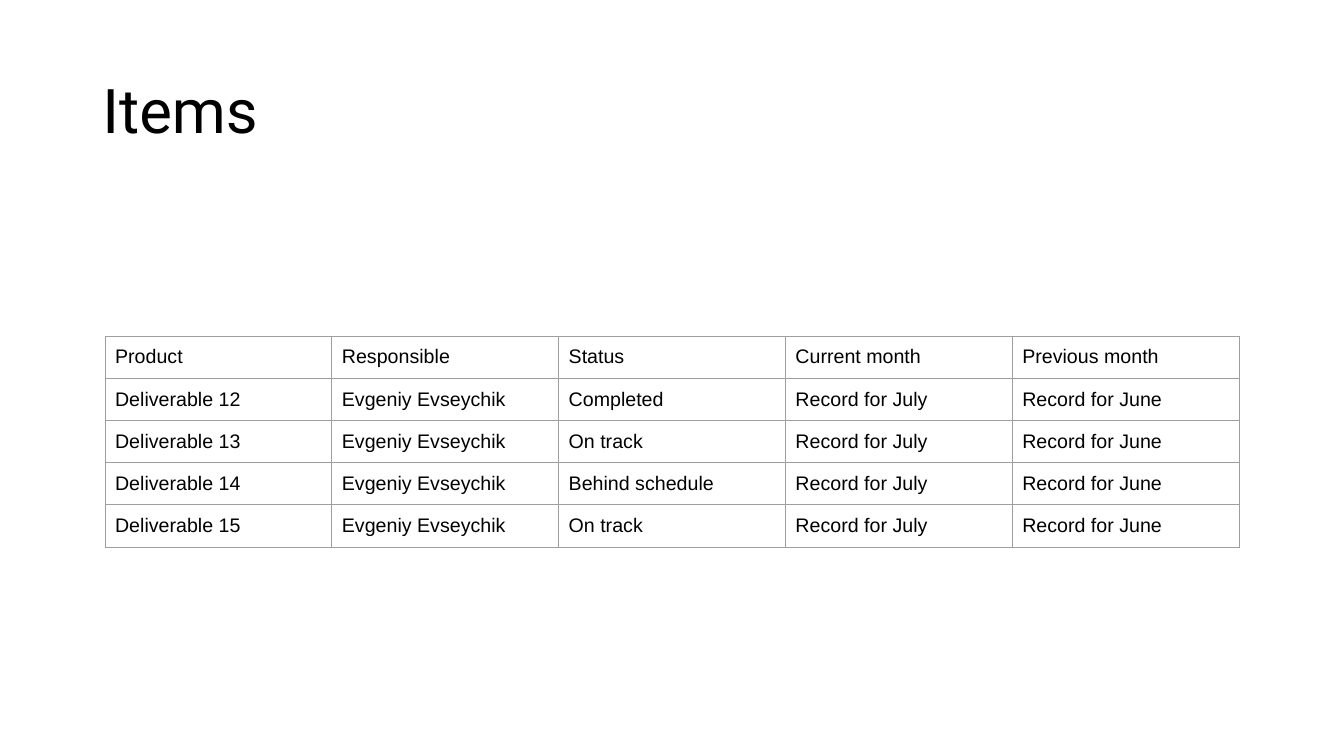
from lxml.etree import SubElement
from pptx import Presentation
from pptx.dml.color import RGBColor
from pptx.enum.text import MSO_ANCHOR, PP_ALIGN
from pptx.oxml.ns import qn
from pptx.util import Pt

HEADING = "Items"
HEADERS = ("Product", "Responsible", "Status", "Current month", "Previous month")
RESPONSIBLE = "Evgeniy Evseychik"
MONTH_RECORDS = ("Record for July", "Record for June")
STATUSES = (
    ("Deliverable 12", "Completed"),
    ("Deliverable 13", "On track"),
    ("Deliverable 14", "Behind schedule"),
    ("Deliverable 15", "On track"),
)
ITEM_ROWS = [HEADERS] + [
    (product, RESPONSIBLE, status, *MONTH_RECORDS) for product, status in STATUSES
]

BLACK = RGBColor(0x00, 0x00, 0x00)
GREY = RGBColor(0x9E, 0x9E, 0x9E)

SLIDE_WIDTH, SLIDE_HEIGHT = 960, 540
HEADING_BOX = (66, 28.75, 828, 104.4)
GRID_LEFT, GRID_TOP = 75, 240
COLUMN_WIDTH, ROW_HEIGHT = 162, 30
CELL_INSET = 7.2
BORDER_WIDTH = 0.75


def write(frame, text, font, size, color=BLACK, spacing=1.0, inset=(7.2, 3.6)):
    frame.margin_left = frame.margin_right = Pt(inset[0])
    frame.margin_top = frame.margin_bottom = Pt(inset[1])
    frame.word_wrap = True
    paragraph = frame.paragraphs[0]
    paragraph.alignment = PP_ALIGN.LEFT
    paragraph.line_spacing = spacing
    run = paragraph.add_run()
    run.text = text
    run.font.name = font
    run.font.size = Pt(size)
    run.font.bold = False
    run.font.color.rgb = color


def outline(cell):
    properties = cell._tc.get_or_add_tcPr()
    for side in ("a:lnL", "a:lnR", "a:lnT", "a:lnB"):
        line = SubElement(properties, qn(side), w=str(Pt(BORDER_WIDTH)))
        fill = SubElement(line, qn("a:solidFill"))
        SubElement(fill, qn("a:srgbClr"), val=str(GREY))


def add_heading(slide):
    heading = slide.shapes.title
    heading.left, heading.top, heading.width, heading.height = map(Pt, HEADING_BOX)
    heading.text_frame.vertical_anchor = MSO_ANCHOR.MIDDLE
    write(heading.text_frame, HEADING, "Roboto", 44, spacing=0.9)


def add_items(slide):
    row_count, column_count = len(ITEM_ROWS), len(HEADERS)
    items = slide.shapes.add_table(
        row_count, column_count, Pt(GRID_LEFT), Pt(GRID_TOP),
        Pt(COLUMN_WIDTH * column_count), Pt(ROW_HEIGHT * row_count),
    ).table
    items.first_row = items.horz_banding = False
    for row, texts in enumerate(ITEM_ROWS):
        for column, text in enumerate(texts):
            cell = items.cell(row, column)
            write(cell.text_frame, text, "Arial", 14)
            cell.margin_left = cell.margin_right = Pt(CELL_INSET)
            cell.margin_top = cell.margin_bottom = Pt(CELL_INSET)
            cell.vertical_anchor = MSO_ANCHOR.TOP
            outline(cell)
            cell.fill.background()


def main():
    deck = Presentation()
    deck.slide_width, deck.slide_height = Pt(SLIDE_WIDTH), Pt(SLIDE_HEIGHT)
    slide = deck.slides.add_slide(deck.slide_layouts[5])
    add_heading(slide)
    add_items(slide)
    deck.save("out.pptx")


if __name__ == "__main__":
    main()
